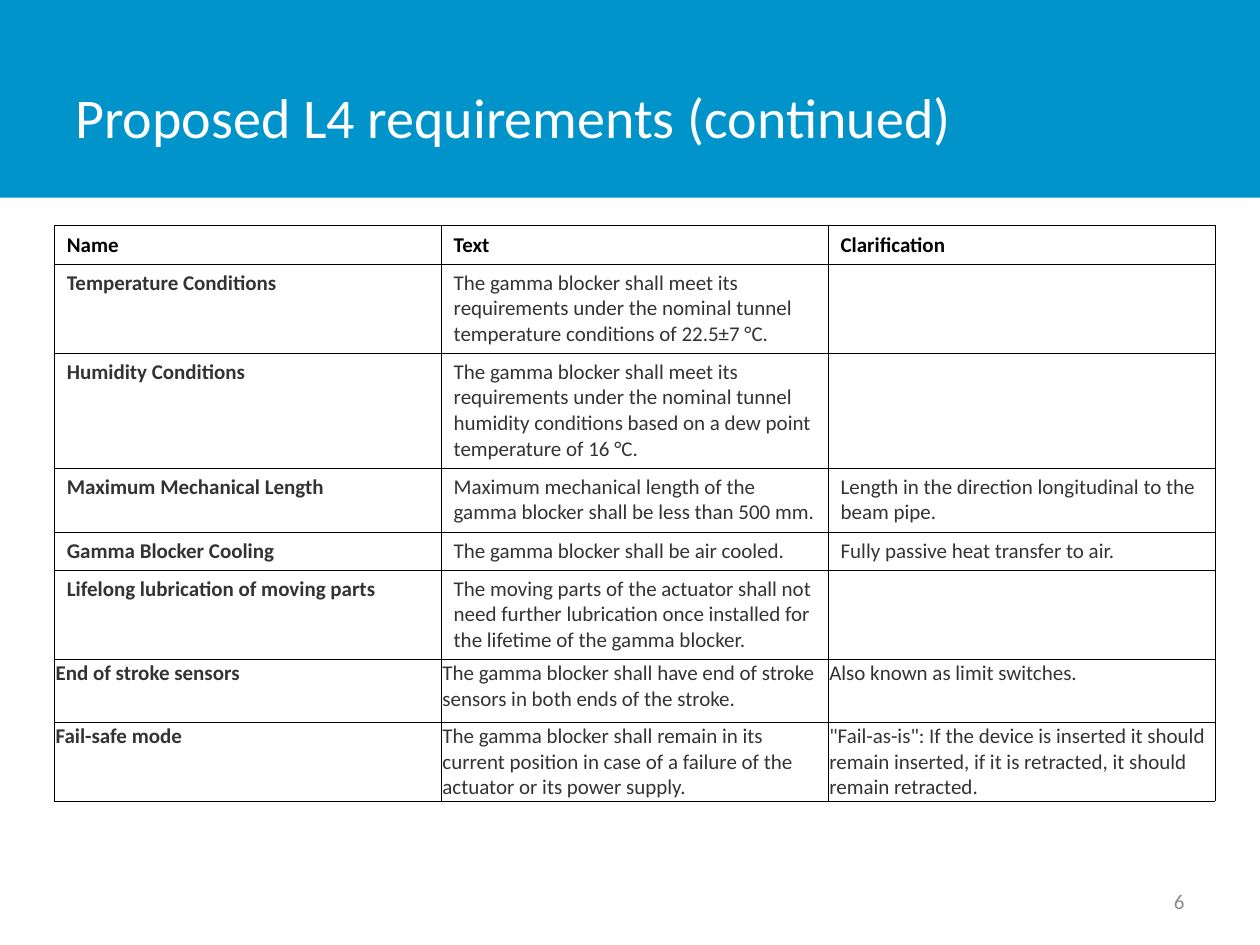
from lxml import etree
from pptx import Presentation
from pptx import util as u
from pptx.dml.color import RGBColor
from pptx.enum import shapes, text
from pptx.oxml.ns import qn

Pt = u.Pt
GRID = "000000"
HEADS = ["Name", "Text", "Clarification"]
# Row height, cell texts
ROWS = [
    (51, ["Temperature Conditions",
          "The gamma blocker shall meet its requirements under the nominal "
          "tunnel temperature conditions of 22.5±7 °C.", ""]),
    (65.7, ["Humidity Conditions",
            "The gamma blocker shall meet its requirements under the nominal "
            "tunnel humidity conditions based on a dew point temperature of 16 °C.", ""]),
    (36.5, ["Maximum Mechanical Length",
            "Maximum mechanical length of the gamma blocker shall be less than 500 mm.",
            "Length in the direction longitudinal to the beam pipe."]),
    (21.8, ["Gamma Blocker Cooling",
            "The gamma blocker shall be air cooled.",
            "Fully passive heat transfer to air."]),
    (51, ["Lifelong lubrication of moving parts",
          "The moving parts of the actuator shall not need further lubrication "
          "once installed for the lifetime of the gamma blocker.", ""]),
    (36, ["End of stroke sensors",
          "The gamma blocker shall have end of stroke sensors in both ends of the stroke.",
          "Also known as limit switches."]),
    (45, ["Fail-safe mode",
          "The gamma blocker shall remain in its current position in case of a "
          "failure of the actuator or its power supply.",
          "\"Fail-as-is\": If the device is inserted it should remain inserted, "
          "if it is retracted, it should remain retracted."]),
]
TIGHT = 6  # first row with narrow margins


def tint(code):
    return RGBColor.from_string(code)


def style(para, words, size, code, bold=False):
    run = para.add_run()
    run.text = words
    look = {"name": "Calibri", "size": Pt(size), "bold": bold}
    for key, val in look.items():
        setattr(run.font, key, val)
    run.font.color.rgb = tint(code)


def band(slide, box, code):
    rect = slide.shapes.add_shape(shapes.MSO_SHAPE.RECTANGLE, *map(Pt, box))
    rect.shadow.inherit = False
    rect.fill.solid()
    rect.fill.fore_color.rgb = tint(code)
    rect.line.fill.background()


def label(slide, box, words, size, code, align):
    frame = slide.shapes.add_textbox(*map(Pt, box)).text_frame
    frame.word_wrap = True
    frame.vertical_anchor = text.MSO_ANCHOR.MIDDLE
    para = frame.paragraphs[0]
    para.alignment = align
    style(para, words, size, code)


def border(cell):
    props = cell._tc.get_or_add_tcPr()
    for spot, side in enumerate(("lnL", "lnR", "lnT", "lnB")):
        line = etree.Element(qn("a:" + side), w=str(Pt(0.5)))
        fill = etree.SubElement(line, qn("a:solidFill"))
        etree.SubElement(fill, qn("a:srgbClr"), val=GRID)
        props.insert(spot, line)


def entry(cell, words, code, bold, tight):
    if tight:
        sides = {"margin_left": 0.75, "margin_right": 0.75,
                 "margin_top": 0.75, "margin_bottom": 0}
        for key, val in sides.items():
            setattr(cell, key, Pt(val))
    cell.fill.background()
    border(cell)
    para = cell.text_frame.paragraphs[0]
    if words:
        style(para, words, 12, code, bold)
    else:
        para.font.size = Pt(12)


def grid(slide, left, top, wide):
    rows = [(21.8, HEADS)] + ROWS
    high = sum(row[0] for row in rows)
    table = slide.shapes.add_table(len(rows), len(HEADS), Pt(left), Pt(top),
                                   Pt(wide * len(HEADS)), Pt(high)).table
    table.horz_banding = False
    for col in table.columns:
        col.width = Pt(wide)
    for r, (tall, words) in enumerate(rows):
        table.rows[r].height = Pt(tall)
        for c, word in enumerate(words):
            code = "333333" if r else "000000"
            entry(table.cell(r, c), word, code, r == 0 or c == 0, r >= TIGHT)


def main():
    deck = Presentation()
    deck.slide_width, deck.slide_height = Pt(720), Pt(540)
    slide = deck.slides.add_slide(deck.slide_layouts[6])
    # Header band and title
    band(slide, (0, 0, 720, 113), "0094CA")
    label(slide, (36, 21.6, 562, 90), "Proposed L4 requirements (continued)",
          32, "FFFFFF", text.PP_ALIGN.LEFT)
    # Requirements table
    grid(slide, 31, 129, 221.1)
    # Page number
    label(slide, (516, 500.5, 168, 28.8), "6", 12, "8C8C8C", text.PP_ALIGN.RIGHT)
    deck.save("out.pptx")


if __name__ == "__main__":
    main()
